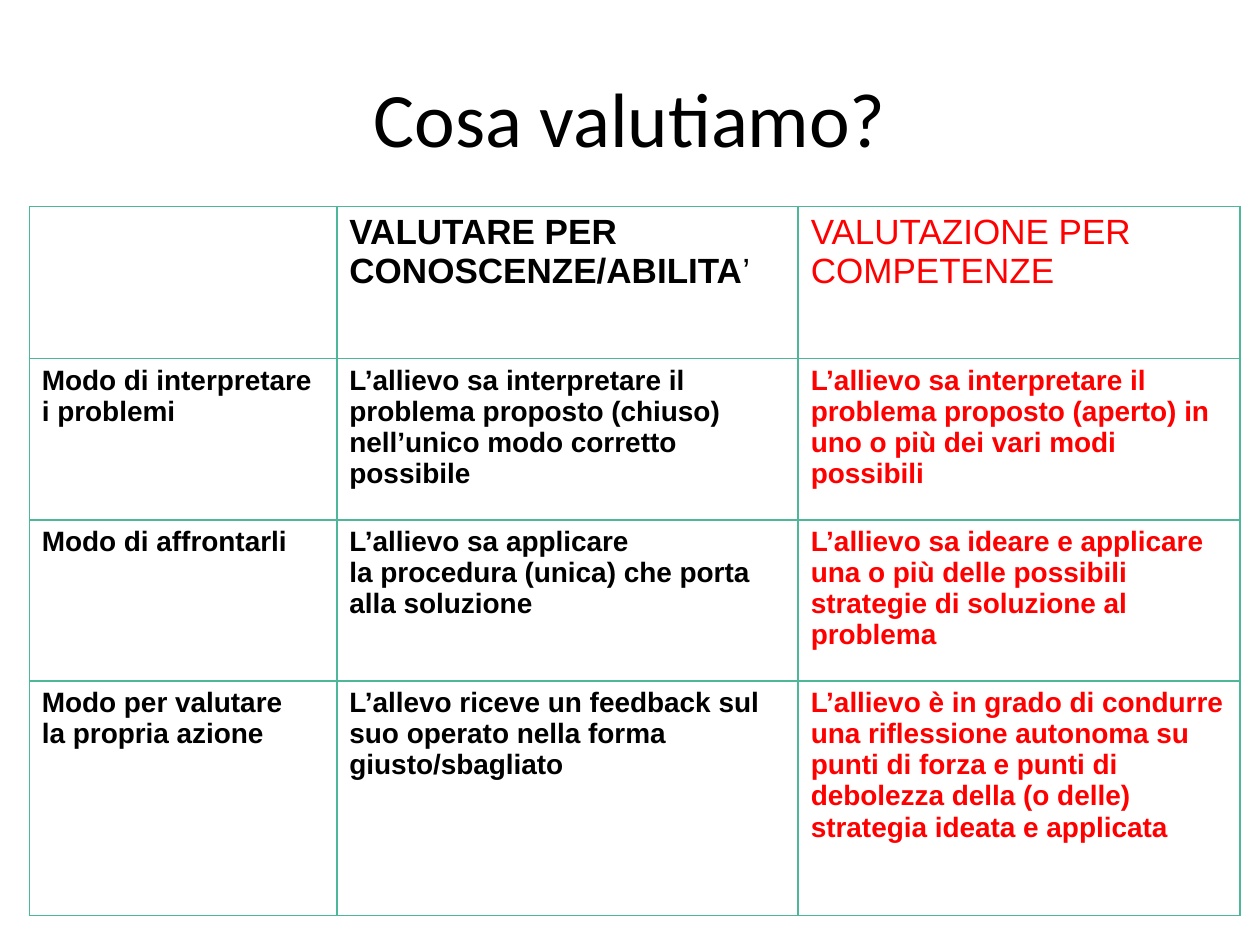
from lxml.etree import SubElement
from pptx import Presentation
from pptx.dml.color import RGBColor
from pptx.enum.text import MSO_ANCHOR as Anchor, PP_ALIGN as Align
from pptx.oxml.ns import qn
from pptx.util import Cm, Pt

COLORS = {"text": "000000", "accent": "FF0000", "border": "4EB799", "cell": "FFFFFF"}

COLUMN_WIDTHS = [6.2, 9.3, 8.91]
ROW_HEIGHTS = [3.07, 3.25, 3.25, 4.73]

HEADERS = ["", "VALUTARE PER CONOSCENZE/ABILITA", "VALUTAZIONE PER COMPETENZE"]
CRITERIA = [
    ["Modo di interpretare\ni problemi",
     "L’allievo sa interpretare il problema proposto (chiuso) nell’unico modo corretto possibile",
     "L’allievo sa interpretare il problema proposto (aperto) in uno o più dei vari modi possibili"],
    ["Modo di affrontarli",
     "L’allievo sa applicare \nla procedura (unica) che porta alla soluzione",
     "L’allievo sa ideare e applicare una o più delle possibili strategie di soluzione al problema"],
    ["Modo per valutare\nla propria azione",
     "L’allevo riceve un feedback sul suo operato nella forma giusto/sbagliato",
     "L’allievo è in grado di condurre una riflessione autonoma su punti di forza e punti di "
     "debolezza della (o delle) strategia ideata e applicata"],
]


def set_font(font, name, size, color, bold=None):
    font.name, font.size, font.bold = name, Pt(size), bold
    font.color.rgb = RGBColor.from_string(COLORS[color])


def add_title(page, text):
    box = page.shapes.add_textbox(Cm(1.27), Cm(0.76), Cm(22.86), Cm(3.18))
    frame = box.text_frame
    frame.word_wrap = True
    frame.vertical_anchor = Anchor.MIDDLE
    para = frame.paragraphs[0]
    para.text = text
    para.alignment = Align.CENTER
    set_font(para.font, "Calibri", 44, "text")


def set_borders(cell):
    properties = cell._tc.get_or_add_tcPr()
    for position, side in enumerate(("lnL", "lnR", "lnT", "lnB")):
        line = SubElement(properties, qn(f"a:{side}"), w=str(Pt(1)))
        fill = SubElement(line, qn("a:solidFill"))
        SubElement(fill, qn("a:srgbClr"), val=COLORS["border"])
        properties.insert(position, line)  # borders precede the cell fill


def fill_cell(cell, text, size, color, bold):
    cell.fill.solid()
    cell.fill.fore_color.rgb = RGBColor.from_string(COLORS["cell"])
    set_borders(cell)
    para = cell.text_frame.paragraphs[0]
    para.text = text
    set_font(para.font, "Arial", size, color, bold)


def add_comparison(page):
    rows = [HEADERS] + CRITERIA
    frame = page.shapes.add_table(len(rows), len(HEADERS), Cm(0.59), Cm(4.16),
                                  Cm(sum(COLUMN_WIDTHS)), Cm(sum(ROW_HEIGHTS)))
    table = frame.table
    table.first_row = table.horz_banding = False
    # Drop the default table style
    properties = table._tbl.tblPr
    properties.remove(properties.find(qn("a:tableStyleId")))

    for column, width in zip(table.columns, COLUMN_WIDTHS):
        column.width = Cm(width)
    for row, height in zip(table.rows, ROW_HEIGHTS):
        row.height = Cm(height)

    for r, texts in enumerate(rows):
        for c, text in enumerate(texts):
            is_header, is_competence = r == 0, c == 2
            fill_cell(table.cell(r, c), text, 20 if is_header else 16,
                      "accent" if is_competence else "text",
                      not (is_header and is_competence))

    # The closing apostrophe of the middle header is not bold
    span = table.cell(0, 1).text_frame.paragraphs[0].add_run()
    span.text = "’"
    span.font.bold = False


def main():
    deck = Presentation()
    deck.slide_width, deck.slide_height = Cm(25.4), Cm(19.05)
    page = deck.slides.add_slide(deck.slide_layouts[6])
    add_title(page, "Cosa valutiamo?")
    add_comparison(page)
    deck.save("out.pptx")


if __name__ == "__main__":
    main()
